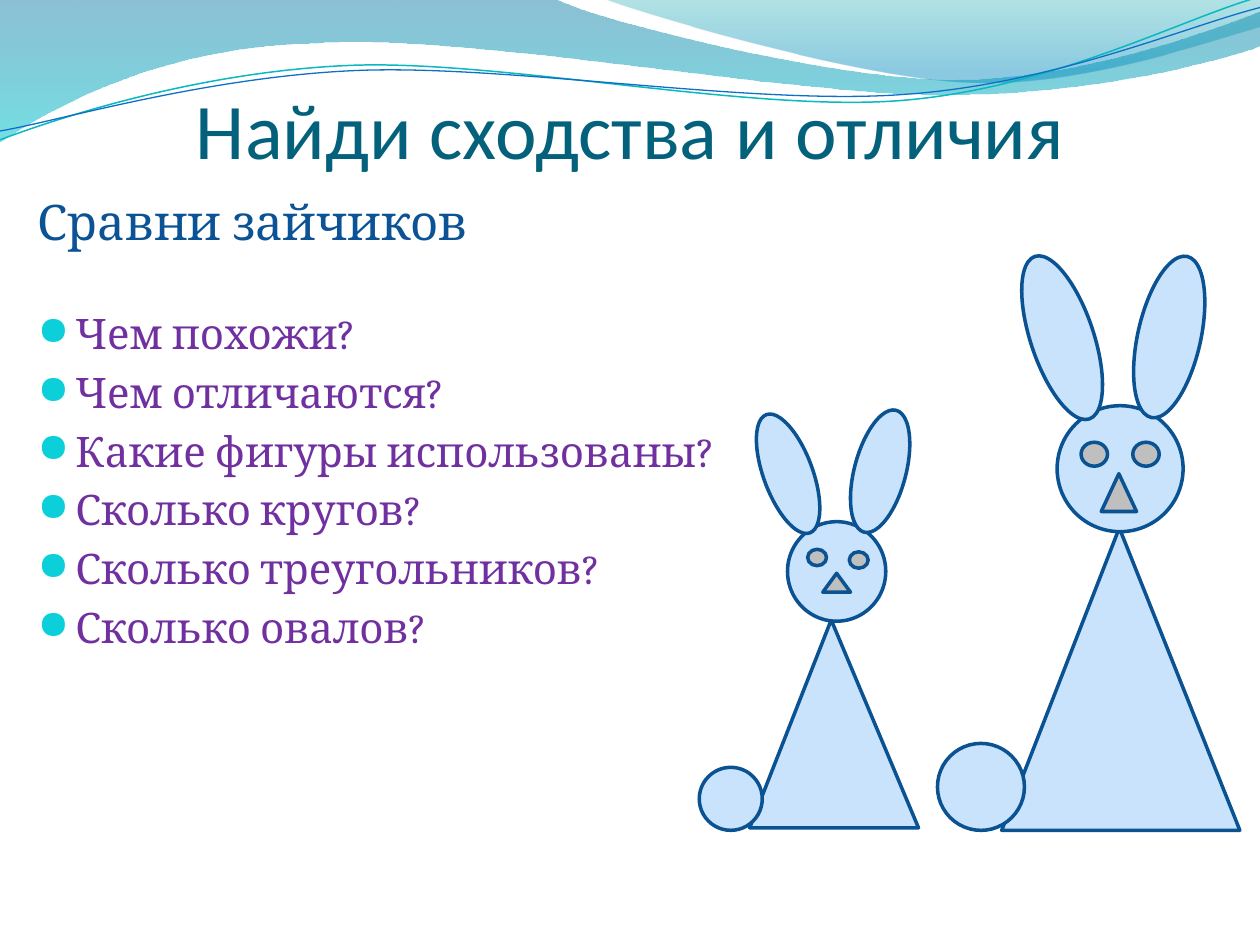
from lxml import etree
from pptx import Presentation
from pptx.dml.color import RGBColor
from pptx.enum.shapes import MSO_SHAPE
from pptx.enum.text import MSO_ANCHOR, PP_ALIGN
from pptx.oxml.ns import qn
from pptx.util import Inches, Pt

OVAL, CONE = MSO_SHAPE.OVAL, MSO_SHAPE.ISOSCELES_TRIANGLE
LEFT, CENTER = PP_ALIGN.LEFT, PP_ALIGN.CENTER
TOP, BOTTOM = MSO_ANCHOR.TOP, MSO_ANCHOR.BOTTOM
FUR, GRAY, EDGE = "C8E3FB", "BFBFBF", "0B5292"

# Waves: a start point, then points (2 numbers) or Bezier curves (6 numbers)
BAND = [(0, 0), (4.4, -0.01), (4.76, 0.17, 6.64, 0.63, 7.58, 0.63),
        (8.53, 0.63, 9.58, 0.26, 10, 0.09), (10.01, 0.36),
        (9.83, 0.44, 8.7, 0.76, 7.46, 0.75), (6.22, 0.75, 3.82, 0.28, 2.57, 0.34),
        (1.29, 0.36, 0.46, 0.83, -0.01, 1.13), (0, 0)]
CREST = [(4.79, -0.01), (5.09, 0.11, 6.82, 0.62, 7.69, 0.65),
         (8.56, 0.69, 9.61, 0.32, 10, 0.21), (10, 0), (4.79, -0.01)]
TEAL = [(0, 1.11), (0.48, 0.93, 1.58, 0.57, 2.77, 0.52),
        (3.95, 0.47, 5.93, 0.89, 7.13, 0.8), (8.33, 0.71, 9.38, 0.15, 9.98, -0.02)]
BLUE = [(0, 1.04), (0.47, 0.96, 1.64, 0.61, 2.83, 0.56),
        (4.03, 0.51, 5.97, 0.84, 7.17, 0.75), (8.36, 0.67, 9.41, 0.21, 10, 0.06)]

# Rabbit parts: kind, fill, left, top, width, height, turn, apex
SMALL = [(CONE, FUR, 5.95, 4.92, 1.34, 1.65, 0, 0.483),
         (OVAL, FUR, 6.25, 4.14, 0.78, 0.79),
         (OVAL, FUR, 6.06, 3.26, 0.39, 1, 339.8),
         (OVAL, FUR, 6.78, 3.24, 0.41, 1, 14.7),
         (OVAL, FUR, 5.55, 6.09, 0.5, 0.5),
         (CONE, GRAY, 6.53, 4.55, 0.22, 0.15),
         (OVAL, GRAY, 6.41, 4.36, 0.15, 0.13)]
LARGE = [(CONE, FUR, 7.95, 4.19, 1.89, 2.4, 0, 0.494),
         (OVAL, FUR, 8.39, 3.22, 1, 1),
         (OVAL, FUR, 8.18, 2, 0.5, 1.36, 341.5),
         (OVAL, FUR, 9.03, 2.02, 0.5, 1.31, 12.6),
         (OVAL, FUR, 7.44, 5.9, 0.69, 0.69),
         (CONE, GRAY, 8.74, 3.76, 0.28, 0.3),
         (OVAL, GRAY, 8.58, 3.51, 0.21, 0.19),
         (OVAL, GRAY, 8.99, 3.51, 0.21, 0.19)]
WINK = (OVAL, GRAY, 6.74, 4.38, 0.15, 0.13)  # right eye of the small rabbit

ASKS = ["Чем похожи?", "Чем отличаются?", "Какие фигуры использованы?",
        "Сколько кругов?", "Сколько треугольников?", "Сколько овалов?"]


def color(code):
    return RGBColor.from_string(code)


def wave(slide, moves, close):
    dots = [(Inches(move[i]), Inches(move[i + 1]))
            for move in moves for i in range(0, len(move), 2)]
    pen = slide.shapes.build_freeform(*dots[0])
    pen.add_line_segments(dots[1:], close=close)
    shape = pen.convert_to_shape()
    shape.shadow.inherit = False
    # Join each run of three points into one curve
    lines = iter(list(shape.element.iter(qn("a:lnTo"))))
    for move in moves[1:]:
        group = [next(lines) for _ in range(len(move) // 2)]
        if len(group) == 3:
            curve = etree.Element(qn("a:cubicBezTo"))
            group[0].addprevious(curve)
            for line in group:
                curve.append(line[0])
                line.getparent().remove(line)
    return shape


def swell(slide, moves, stops):
    """Filled wave; each stop is place, color and opacity in percent."""
    shape = wave(slide, moves, True)
    shape.line.fill.background()
    shape.fill.gradient()
    shape.fill.gradient_angle = 270
    for stop, (place, code, _) in zip(shape.fill.gradient_stops, stops):
        stop.position = place
        stop.color.rgb = color(code)
    for node, (_, _, part) in zip(shape.element.iter(qn("a:srgbClr")), stops):
        etree.SubElement(node, qn("a:alpha"), val=str(part * 1000))


def thread(slide, moves, code, width):
    shape = wave(slide, moves, False)
    shape.fill.background()
    shape.line.color.rgb = color(code)
    shape.line.width = Pt(width)


def figure(slide, kind, fill, x, y, w, h, turn=0, apex=0.5):
    shape = slide.shapes.add_shape(kind, Inches(x), Inches(y), Inches(w), Inches(h))
    shape.shadow.inherit = False
    shape.rotation = turn
    if kind == CONE:
        shape.adjustments[0] = apex
    shape.fill.solid()
    shape.fill.fore_color.rgb = color(fill)
    shape.line.color.rgb = color(EDGE)
    shape.line.width = Pt(2)


def frame(slide, x, y, w, h, pads, anchor=TOP):
    box = slide.shapes.add_textbox(Inches(x), Inches(y), Inches(w), Inches(h)).text_frame
    box.word_wrap = True
    box.vertical_anchor = anchor
    box.margin_left = box.margin_right = Inches(pads[0])
    box.margin_top, box.margin_bottom = Inches(pads[1]), Inches(pads[2])
    return box


def write(para, text, size=24, font="Cambria", code="7030A0", align=LEFT, gap=0):
    para.alignment = align
    para.space_before = Pt(gap)
    run = para.add_run()
    run.text = text
    run.font.size = Pt(size)
    run.font.name = font
    run.font.color.rgb = color(code)


def bullet(para):
    props = para._p.get_or_add_pPr()
    props.set("marL", str(Inches(0.3)))
    props.set("indent", str(-Inches(0.3)))
    tint = etree.SubElement(props, qn("a:buClr"))
    etree.SubElement(tint, qn("a:srgbClr"), val="0BD0D9")
    etree.SubElement(props, qn("a:buSzPct"), val="95000")
    etree.SubElement(props, qn("a:buFont"), typeface="OpenSymbol")
    etree.SubElement(props, qn("a:buChar"), char="●")


def main():
    deck = Presentation()
    deck.slide_width, deck.slide_height = Inches(10), Inches(7.5)
    slide = deck.slides.add_slide(deck.slide_layouts[6])

    # Waves along the top
    swell(slide, BAND, [(0, "0074A1", 45), (1, "00C6CF", 55)])
    swell(slide, CREST, [(0, "00A1A9", 30), (0.8, "008BBF", 45)])
    thread(slide, TEAL, "0AB8BF", 0.85)
    thread(slide, BLUE, "0F6FC6", 0.75)

    # Title and questions
    title = frame(slide, 0.5, 0.77, 9, 0.62, (0, 0.05, 0), BOTTOM)
    write(title.paragraphs[0], "Найди сходства и отличия",
          size=45, font="Calibri", code="04617B", align=CENTER)
    body = frame(slide, 0.2, 1.47, 8.99, 5.37, (0.1, 0.05, 0.05))
    write(body.paragraphs[0], "Сравни зайчиков", size=28, code="0B5394", gap=5)
    for i, ask in enumerate(ASKS):
        para = body.add_paragraph()
        write(para, ask, gap=4.8 if i else 32.8)
        bullet(para)

    # Rabbits
    for part in SMALL + LARGE + [WINK]:
        figure(slide, *part)

    deck.save("out.pptx")


if __name__ == "__main__":
    main()
